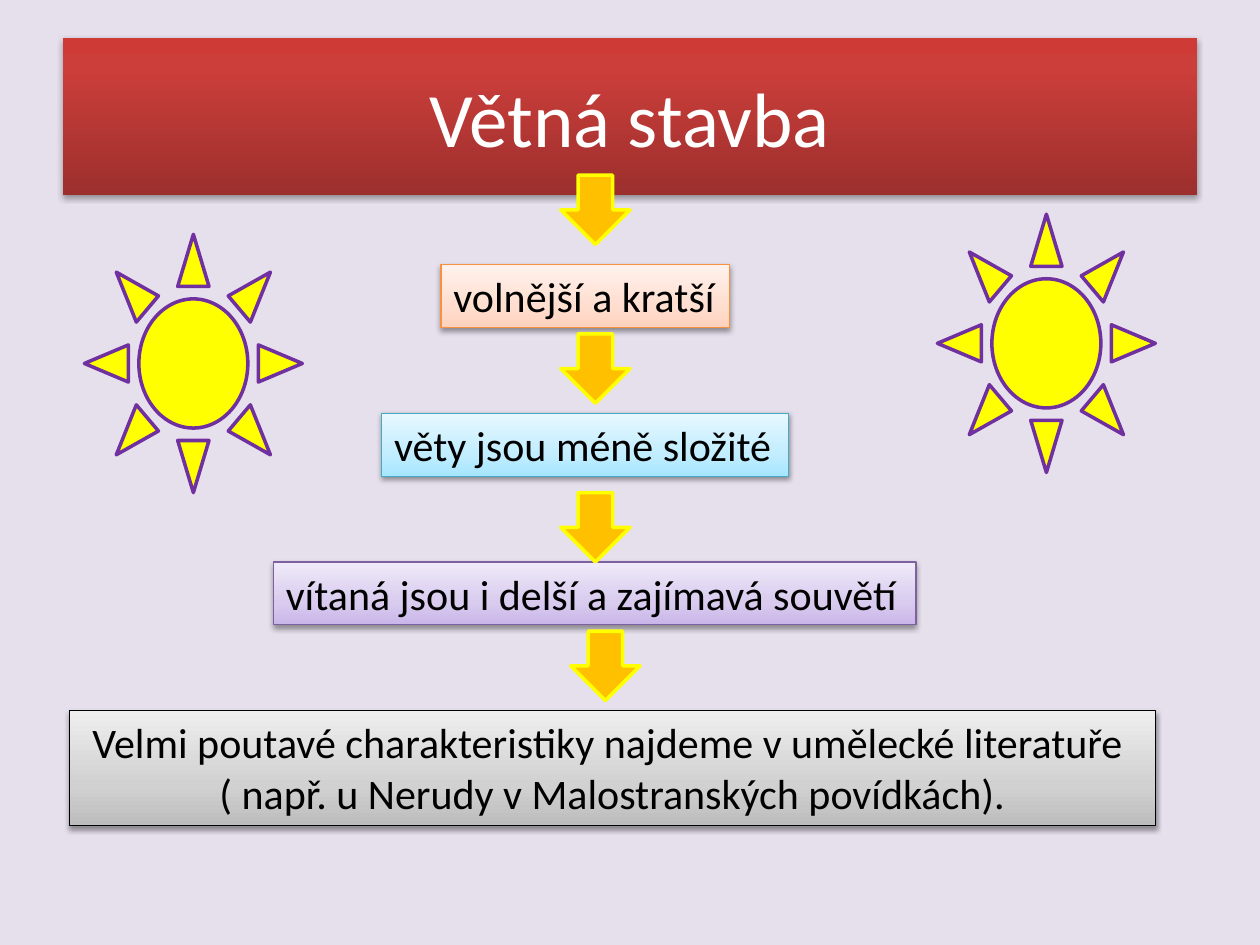
from dataclasses import dataclass

from lxml.etree import SubElement
from pptx import Presentation
from pptx.dml.color import RGBColor
from pptx.enum.shapes import MSO_SHAPE
from pptx.enum.text import MSO_ANCHOR, MSO_AUTO_SIZE, PP_ALIGN
from pptx.oxml.ns import qn
from pptx.util import Inches, Pt

LILAC = RGBColor(0xE6, 0xE0, 0xEC)
WHITE = RGBColor(0xFF, 0xFF, 0xFF)
BLACK = RGBColor(0x00, 0x00, 0x00)
GOLD = RGBColor(0xFF, 0xC0, 0x00)
YELLOW = RGBColor(0xFF, 0xFF, 0x00)
PURPLE = RGBColor(0x70, 0x30, 0xA0)
ORANGE = RGBColor(0xF6, 0x92, 0x40)
TEAL = RGBColor(0x46, 0xAA, 0xC5)
VIOLET = RGBColor(0x7D, 0x60, 0xA0)

# Gradient stops run from the bottom edge to the top: (percent, colour)
Stops = list[tuple[int, RGBColor]]


def blend(low: str, mid: str, top: str, turn: int = 35) -> Stops:
    colors = [RGBColor.from_string(code) for code in (low, mid, top)]
    return list(zip((0, turn, 100), colors))


RED = blend("9C2F2D", "CB3E3A", "CE3B37", 80)
PEACH = blend("FFD2BD", "FFDED0", "FFF2ED")
SKY = blend("A7E6FF", "C1EDFF", "E7F8FF")
MAUVE = blend("C9B5E8", "D8CBEE", "F0EAF9")
GRAY = blend("BDBDBD", "D1D1D1", "EEEEEE")


@dataclass
class Box:
    text: str
    left: float
    top: float
    width: float
    height: float
    stops: Stops
    edge: RGBColor
    wrap: bool = False


BOXES = [
    Box("volnější a kratší", 3.5, 2.1, 2.29, 0.5, PEACH, ORANGE),
    Box("věty jsou méně složité", 3.03, 3.28, 3.23, 0.5, SKY, TEAL),
    Box("vítaná jsou i delší a zajímavá souvětí", 2.17, 4.46, 5.1, 0.5,
        MAUVE, VIOLET),
    Box("Velmi poutavé charakteristiky najdeme v umělecké literatuře  "
        "( např. u Nerudy v Malostranských povídkách).",
        0.55, 5.64, 8.62, 0.91, GRAY, BLACK, wrap=True),
]
ARROWS = [(4.45, 1.39), (4.45, 2.65), (4.45, 3.91), (4.53, 5.01)]
SUNS = [(7.44, 1.7), (0.67, 1.86)]


def shade(shape, stops: Stops) -> None:
    """Fill with a vertical gradient."""
    shape.fill.gradient()
    shape.fill.gradient_angle = 90
    rows = shape._element.spPr.find(qn("a:gradFill")).find(qn("a:gsLst"))
    for row in list(rows):
        rows.remove(row)
    for spot, color in stops:
        row = SubElement(rows, qn("a:gs"), pos=str(spot * 1000))
        SubElement(row, qn("a:srgbClr"), val=str(color))


def drop(shape, alpha: int, dist: float) -> None:
    """Cast a soft black shadow straight down."""
    shape.shadow.inherit = False
    effects = shape._element.spPr.find(qn("a:effectLst"))
    cast = SubElement(effects, qn("a:outerShdw"), blurRad=str(Pt(3.1)),
                      dist=str(Pt(dist)), dir="5400000", rotWithShape="0")
    color = SubElement(cast, qn("a:srgbClr"), val=str(BLACK))
    SubElement(color, qn("a:alpha"), val=str(alpha * 1000))


def write(shape, text: str, size: int, color: RGBColor, align) -> None:
    para = shape.text_frame.paragraphs[0]
    para.text = text
    para.alignment = align
    para.font.name = "Calibri"
    para.font.size = Pt(size)
    para.font.color.rgb = color


def add_box(slide, box: Box) -> None:
    shape = slide.shapes.add_shape(
        MSO_SHAPE.RECTANGLE, Inches(box.left), Inches(box.top),
        Inches(box.width), Inches(box.height))
    shade(shape, box.stops)
    shape.line.color.rgb = box.edge
    shape.line.width = Pt(0.75)
    drop(shape, 38, 1.6)
    frame = shape.text_frame
    frame.word_wrap = box.wrap
    frame.auto_size = MSO_AUTO_SIZE.SHAPE_TO_FIT_TEXT
    frame.vertical_anchor = MSO_ANCHOR.TOP
    align = PP_ALIGN.CENTER if box.wrap else PP_ALIGN.LEFT
    write(shape, box.text, 24, BLACK, align)


def add_sign(slide, kind: MSO_SHAPE, spot: tuple[float, float],
             size: tuple[float, float], color: RGBColor,
             edge: RGBColor) -> None:
    shape = slide.shapes.add_shape(
        kind, *(Inches(value) for value in spot + size))
    shape.shadow.inherit = False
    shape.fill.solid()
    shape.fill.fore_color.rgb = color
    shape.line.color.rgb = edge
    shape.line.width = Pt(2)


def main() -> None:
    deck = Presentation()
    deck.slide_width, deck.slide_height = Inches(10), Inches(7.5)
    slide = deck.slides.add_slide(deck.slide_layouts[5])
    slide.background.fill.solid()
    slide.background.fill.fore_color.rgb = LILAC

    # Title banner
    title = slide.shapes.title
    title.left, title.top = Inches(0.5), Inches(0.3)
    title.width, title.height = Inches(9), Inches(1.25)
    shade(title, RED)
    drop(title, 35, 1.8)
    title.text_frame.vertical_anchor = MSO_ANCHOR.MIDDLE
    write(title, "Větná stavba", 44, WHITE, PP_ALIGN.CENTER)

    # Chain of statements, with the arrows between them
    for box in BOXES[:-1]:
        add_box(slide, box)
    for spot in ARROWS:
        add_sign(slide, MSO_SHAPE.DOWN_ARROW, spot, (0.55, 0.55), GOLD, YELLOW)
    add_box(slide, BOXES[-1])

    # Suns on both sides
    for spot in SUNS:
        add_sign(slide, MSO_SHAPE.SUN, spot, (1.73, 2.05), YELLOW, PURPLE)

    deck.save("out.pptx")


if __name__ == "__main__":
    main()
